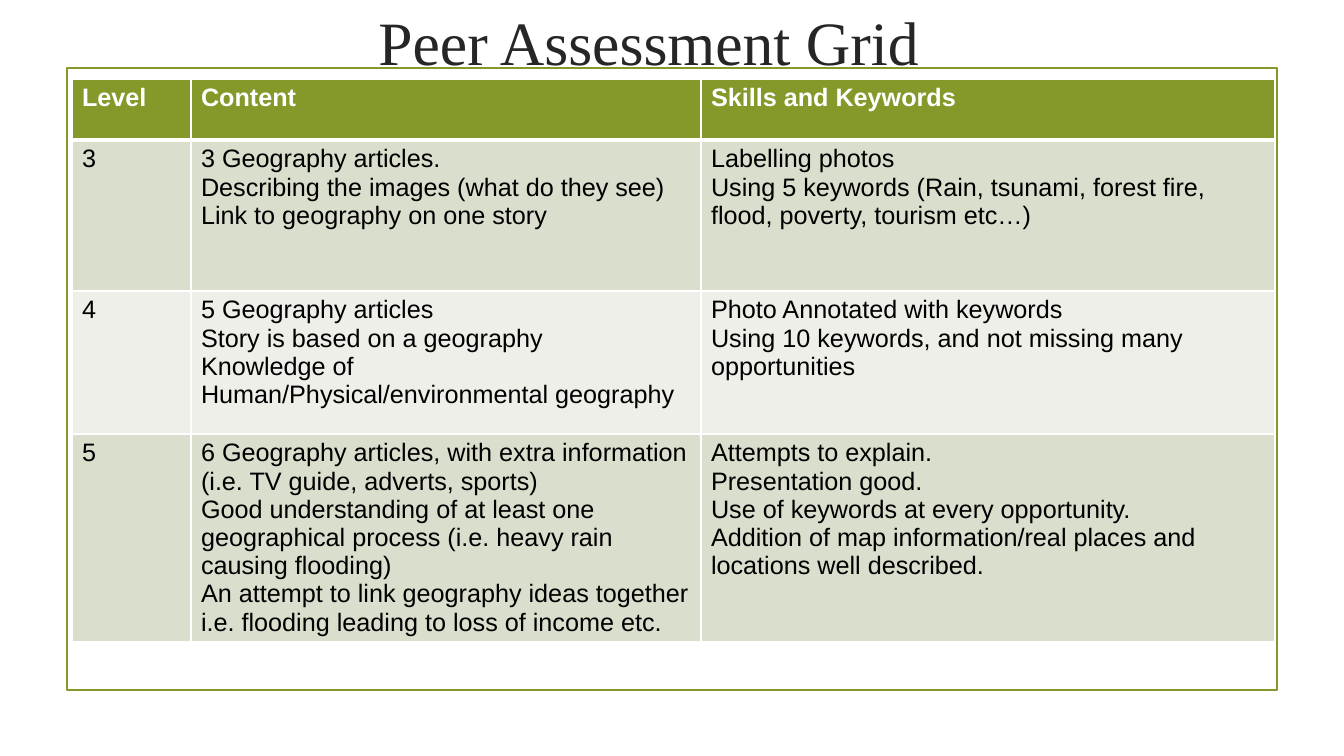
from lxml import etree
from pptx import Presentation
from pptx import util as u
from pptx.dml.color import RGBColor
from pptx.enum import shapes, text
from pptx.oxml.ns import qn

TITLE = "Peer Assessment Grid"
ROWS = [
    [["Level"], ["Content"], ["Skills and Keywords"]],
    [["3"],
     ["3 Geography articles.",
      "Describing the images (what do they see)",
      "Link to geography on one story"],
     ["Labelling photos",
      "Using 5 keywords (Rain, tsunami, forest fire, flood, poverty, tourism etc…)"]],
    [["4"],
     ["5 Geography articles",
      "Story is based on a geography",
      "Knowledge of Human/Physical/environmental geography"],
     ["Photo Annotated with keywords",
      "Using 10 keywords, and not missing many opportunities"]],
    [["5"],
     ["6 Geography articles, with extra information (i.e. TV guide, adverts, sports)",
      "Good understanding of at least one geographical process (i.e. heavy rain causing flooding)",
      "An attempt to link geography ideas together i.e. flooding leading to loss of income etc."],
     ["Attempts to explain.",
      "Presentation good.",
      "Use of keywords at every opportunity.",
      "Addition of map information/real places and locations well described."]],
]
COLS = [119, 510, 574]
HEIGHTS = [61, 151, 143, 207]
GREEN, WHITE, BLACK, INK = "83992A", "FFFFFF", "000000", "262626"
BANDS = ["D9DECD", "EDEFE8"]


def px(n):
    return u.Emu(round(n * 914400 / 100.8))


def rgb(color):
    return RGBColor.from_string(color)


def add_text(tf, lines, font, size, color, bold=False, align=text.PP_ALIGN.LEFT):
    for i, line in enumerate(lines):
        p = tf.paragraphs[0] if i == 0 else tf.add_paragraph()
        p.alignment = align
        r = p.add_run()
        r.text = line
        r.font.name, r.font.size, r.font.bold = font, u.Pt(size), bold
        r.font.color.rgb = rgb(color)


def add_border(cell, side, points):
    tc_pr = cell._tc.get_or_add_tcPr()
    ln = etree.SubElement(tc_pr, qn("a:ln" + side), w=str(u.Pt(points)))
    fill = etree.SubElement(ln, qn("a:solidFill"))
    etree.SubElement(fill, qn("a:srgbClr"), val=WHITE)


def add_frame(s):
    sp = s.shapes.add_shape(shapes.MSO_SHAPE.RECTANGLE, px(67), px(68), px(1210), px(622))
    sp.shadow.inherit = False
    sp.fill.background()
    sp.line.color.rgb = rgb(GREEN)
    sp.line.width = u.Pt(1.25)
    s.shapes._spTree.insert(2, sp._element)


def add_title(s):
    sp = s.shapes.title
    sp.left, sp.top, sp.width, sp.height = px(120), px(-31), px(1058), px(144)
    tf = sp.text_frame
    tf.auto_size = text.MSO_AUTO_SIZE.NONE
    tf.vertical_anchor = text.MSO_ANCHOR.MIDDLE
    add_text(tf, [TITLE], "Times New Roman", 44, INK, align=text.PP_ALIGN.CENTER)


def add_grid(s):
    table = s.shapes.add_table(len(ROWS), len(COLS), px(72), px(79),
                               px(sum(COLS)), px(sum(HEIGHTS))).table
    for column, width in zip(table.columns, COLS):
        column.width = px(width)
    for i, (row, height) in enumerate(zip(ROWS, HEIGHTS)):
        table.rows[i].height = px(height)
        header = i == 0
        for j, lines in enumerate(row):
            cell = table.cell(i, j)
            edges = {"L": 1, "R": 1, "T": 3 if i == 1 else 1, "B": 3 if header else 1}
            for side, points in edges.items():
                add_border(cell, side, points)
            cell.fill.solid()
            cell.fill.fore_color.rgb = rgb(GREEN if header else BANDS[(i - 1) % 2])
            add_text(cell.text_frame, lines, "Arial", 18, WHITE if header else BLACK, header)


def main():
    """Build the peer assessment slide."""
    prs = Presentation()
    prs.slide_width, prs.slide_height = px(1344), px(756)
    s = prs.slides.add_slide(prs.slide_layouts[5])
    add_frame(s)
    add_title(s)
    add_grid(s)
    prs.save("out.pptx")


if __name__ == "__main__":
    main()
